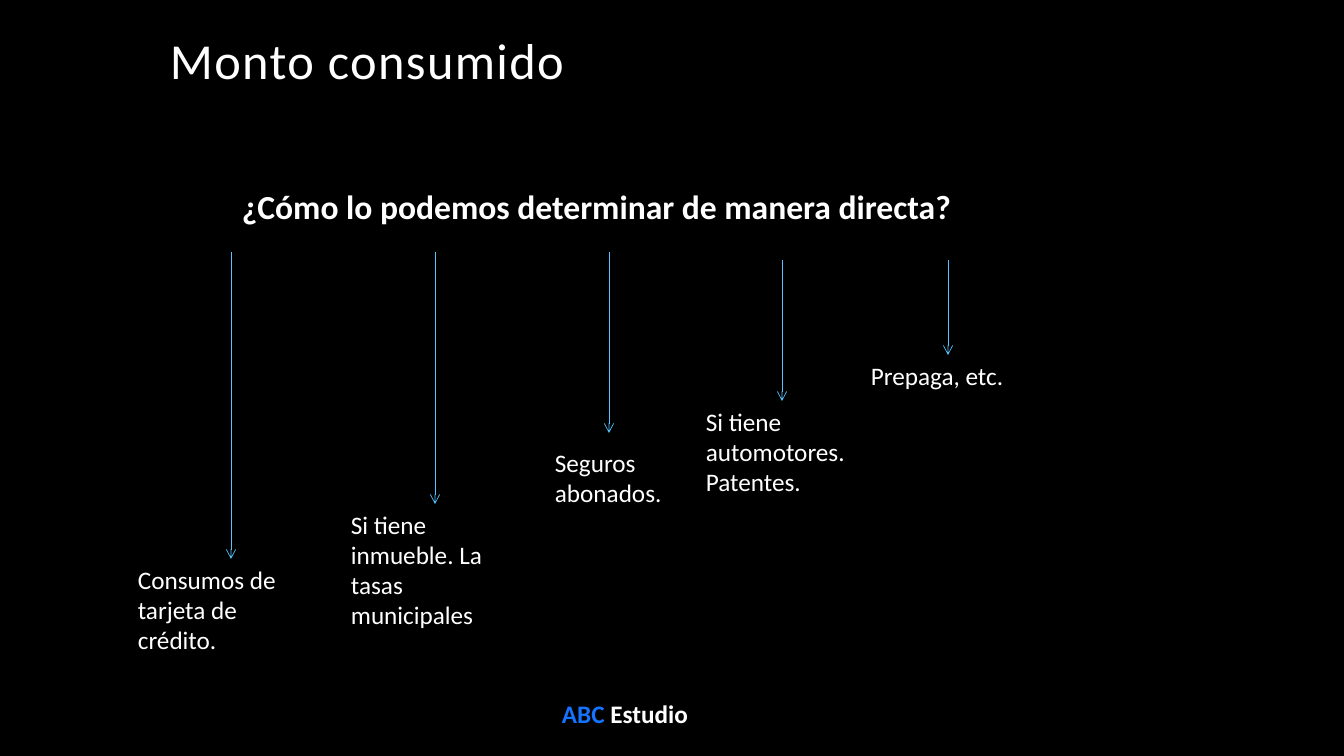
"""Build the "Monto consumido" slide: a question with arrows to five answers."""
from lxml import etree
from pptx import Presentation
from pptx.dml.color import RGBColor
from pptx.enum.shapes import MSO_CONNECTOR
from pptx.enum.text import PP_ALIGN
from pptx.oxml.ns import qn
from pptx.util import Emu, Pt

STRAIGHT = MSO_CONNECTOR.STRAIGHT
LEFT, CENTER = PP_ALIGN.LEFT, PP_ALIGN.CENTER
FONT = "Calibri"
COLORS = {"back": "000000", "text": "FFFFFF", "arrow": "56C5FF", "brand": "1474FF"}
ANSWER_W, LINE_H, INSETS = 196, 30, 10

# text, lines, box left, box top, arrow x, arrow start, arrow end
ANSWERS = [
    ("Consumos de tarjeta de crédito.", 3, 128, 559, 231, 252, 559),
    ("Si tiene inmueble. La tasas municipales", 4, 341, 504, 435, 252, 504),
    ("Seguros abonados.", 2, 545, 442, 609, 252, 433),
    ("Si tiene automotores. Patentes.", 3, 696, 401, 782, 260, 401),
    ("Prepaga, etc.", 1, 861, 355, 948, 260, 355),
]


def px(n):
    return Emu(round(n * 914400 / 100.8))


def rgb(name):
    return RGBColor.from_string(COLORS[name])


def add_text(s, box, runs, size, bold=False, align=LEFT):
    tb = s.shapes.add_textbox(*map(px, box))
    tb.text_frame.word_wrap = True
    p = tb.text_frame.paragraphs[0]
    p.alignment = align
    for text, color in runs:
        r = p.add_run()
        r.text = text
        r.font.name = FONT
        r.font.size = Pt(size)
        r.font.bold = bold
        r.font.color.rgb = rgb(color)
    return p


def add_title(s, box):
    p = add_text(s, box, [("Monto consumido", "text")], 36)
    p.line_spacing = 0.9
    p.runs[0].font._element.set("spc", "100")


def add_question(s, box):
    question = "¿Cómo lo podemos determinar de manera directa?"
    add_text(s, box, [(question, "text")], 24, True, CENTER)


def add_arrow(s, x, start, end):
    arrow = s.shapes.add_connector(STRAIGHT, px(x), px(start), px(x), px(end))
    arrow.line.color.rgb = rgb("arrow")
    arrow.line.width = Pt(0.5)
    etree.SubElement(arrow.line._get_or_add_ln(), qn("a:tailEnd"), type="arrow")
    etree.SubElement(arrow._element.spPr, qn("a:effectLst"))


def add_answers(s):
    for text, lines, left, top, x, start, end in ANSWERS:
        add_arrow(s, x, start, end)
        box = (left, top, ANSWER_W, lines * LINE_H + INSETS)
        add_text(s, box, [(text, "text")], 18)


def add_footer(s, box):
    add_text(s, box, [("ABC", "brand"), (" Estudio", "text")], 18, True, CENTER)


def main():
    prs = Presentation()
    prs.slide_width, prs.slide_height = px(1344), px(756)
    s = prs.slides.add_slide(prs.slide_layouts[6])
    s.background.fill.solid()
    s.background.fill.fore_color.rgb = rgb("back")
    add_title(s, (160, 31, 1008, 151))
    add_question(s, (167, 181, 859, 50))
    add_answers(s)
    add_footer(s, (444, 693, 362, 40))
    prs.save("out.pptx")


if __name__ == "__main__":
    main()
